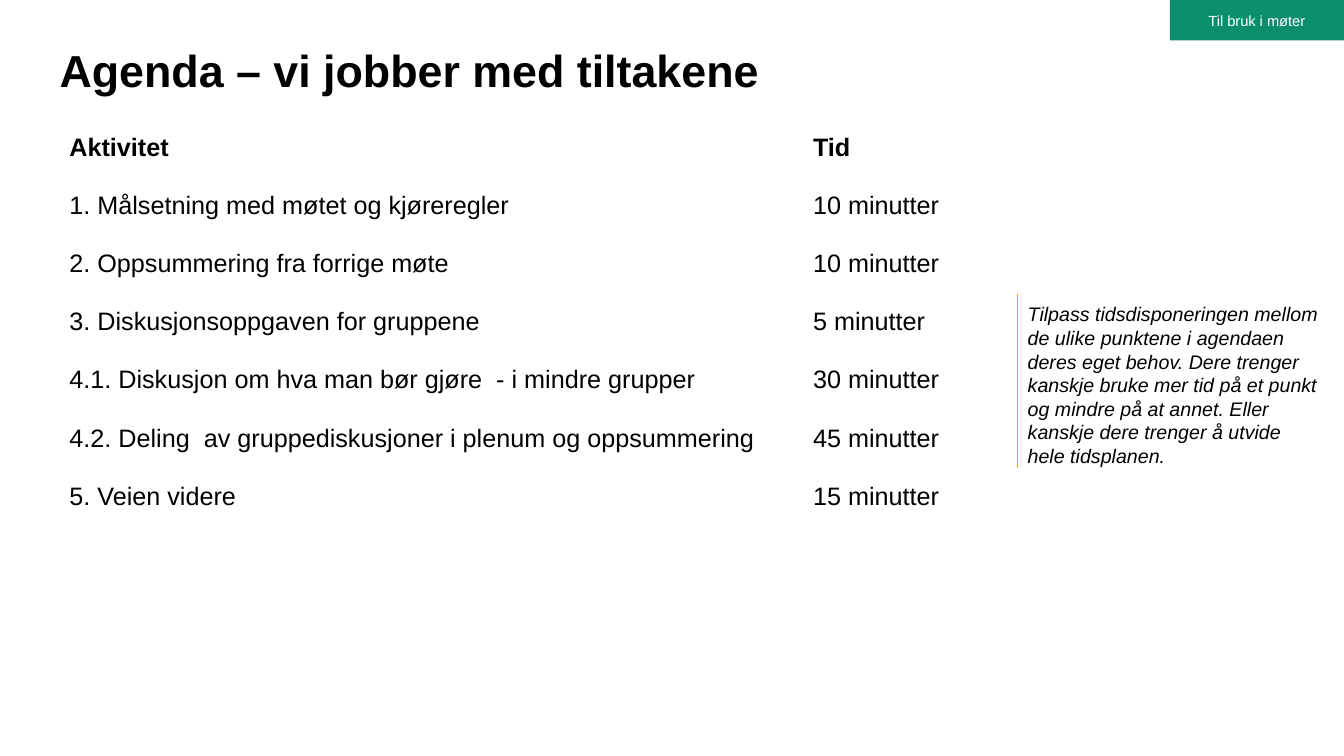
from dataclasses import dataclass

from lxml.etree import SubElement
from pptx import Presentation
from pptx.dml.color import RGBColor
from pptx.enum.shapes import MSO_CONNECTOR, MSO_SHAPE
from pptx.enum.text import MSO_ANCHOR, MSO_AUTO_SIZE, PP_ALIGN
from pptx.oxml.ns import qn
from pptx.shapes.shapetree import GroupShapes, SlideShapes
from pptx.slide import Slide
from pptx.text.text import TextFrame
from pptx.util import Cm, Pt

COLORS = {"text": "000000", "badge": "0A8E6E", "badge_text": "FFFFFF", "rule": "F0A519"}
FONT = "Arial"
LEFT = 1.5
AGENDA_TOP = 3.18
ROW_PITCH = 1.465
ROW_HEIGHT = 1.02
ACTIVITY_WIDTH = 23.01
TIME_LEFT = 20.24
TIME_WIDTH = 7.82
NOTE_LEFT = 25.65


@dataclass(frozen=True)
class AgendaRow:
    activity: str
    time: str
    bold: bool = False


AGENDA = [
    AgendaRow("Aktivitet", "Tid", bold=True),
    AgendaRow("1. Målsetning med møtet og kjøreregler", "10 minutter"),
    AgendaRow("2. Oppsummering fra forrige møte", "10 minutter"),
    AgendaRow("3. Diskusjonsoppgaven for gruppene", "5 minutter"),
    AgendaRow("4.1. Diskusjon om hva man bør gjøre  - i mindre grupper", "30 minutter"),
    AgendaRow("4.2. Deling  av gruppediskusjoner i plenum og oppsummering", "45 minutter"),
    AgendaRow("5. Veien videre", "15 minutter"),
]
NOTE = (
    "Tilpass tidsdisponeringen mellom de ulike punktene i agendaen deres eget behov. "
    "Dere trenger kanskje bruke mer tid på et punkt og mindre på at annet. "
    "Eller kanskje dere trenger å utvide hele tidsplanen."
)


def color(name: str) -> RGBColor:
    return RGBColor.from_string(COLORS[name])


def write(frame: TextFrame, text: str, size: float, ink: str = "text",
          bold: bool = False, italic: bool = False) -> None:
    frame.text = text
    frame.word_wrap = True
    font = frame.paragraphs[0].runs[0].font
    font.name, font.size, font.bold, font.italic = FONT, Pt(size), bold, italic
    font.color.rgb = color(ink)


def add_text(shapes: SlideShapes | GroupShapes, left: float, top: float, width: float,
             height: float, text: str, size: float, bold: bool = False,
             italic: bool = False) -> TextFrame:
    frame = shapes.add_textbox(Cm(left), Cm(top), Cm(width), Cm(height)).text_frame
    write(frame, text, size, bold=bold, italic=italic)
    frame.auto_size = MSO_AUTO_SIZE.SHAPE_TO_FIT_TEXT
    return frame


def add_title(slide: Slide) -> None:
    title = slide.shapes.title
    title.left, title.top, title.width, title.height = Cm(LEFT), Cm(1.22), Cm(31.78), Cm(1.96)
    frame = title.text_frame
    write(frame, "Agenda – vi jobber med tiltakene", 32, bold=True)
    frame.margin_left = frame.margin_right = frame.margin_top = frame.margin_bottom = 0
    frame.vertical_anchor = MSO_ANCHOR.TOP
    frame.auto_size = MSO_AUTO_SIZE.NONE
    frame.paragraphs[0].alignment = PP_ALIGN.LEFT
    frame.paragraphs[0].line_spacing = 0.9


def add_agenda(slide: Slide) -> None:
    for index, row in enumerate(AGENDA):
        top = AGENDA_TOP + index * ROW_PITCH
        add_text(slide.shapes, LEFT, top, ACTIVITY_WIDTH, ROW_HEIGHT, row.activity, 18, row.bold)
        add_text(slide.shapes, TIME_LEFT, top, TIME_WIDTH, ROW_HEIGHT, row.time, 18, row.bold)


def add_badge(slide: Slide) -> None:
    badge = slide.shapes.add_shape(MSO_SHAPE.RECTANGLE, Cm(29.48), 0, Cm(4.39), Cm(1.02))
    badge.shadow.inherit = False
    badge.fill.solid()
    badge.fill.fore_color.rgb = color("badge")
    badge.line.fill.background()
    write(badge.text_frame, "Til bruk i møter", 10.5, "badge_text")
    badge.text_frame.vertical_anchor = MSO_ANCHOR.MIDDLE
    badge.text_frame.paragraphs[0].alignment = PP_ALIGN.CENTER


def add_note(slide: Slide) -> None:
    shapes = slide.shapes.add_group_shape().shapes
    frame = add_text(shapes, NOTE_LEFT, 7.47, TIME_WIDTH, 4.45, NOTE, 14, italic=True)
    frame.vertical_anchor = MSO_ANCHOR.MIDDLE
    rule = shapes.add_connector(
        MSO_CONNECTOR.STRAIGHT, Cm(NOTE_LEFT), Cm(7.42), Cm(NOTE_LEFT), Cm(11.79))
    rule.line.color.rgb = color("rule")
    rule.line.width = Pt(0.5)
    SubElement(rule.element.spPr, qn("a:effectLst"))


def main() -> None:
    deck = Presentation()
    deck.slide_width, deck.slide_height = Cm(33.87), Cm(19.05)
    slide = deck.slides.add_slide(deck.slide_layouts[5])
    add_title(slide)
    add_agenda(slide)
    add_badge(slide)
    add_note(slide)
    deck.save("out.pptx")


if __name__ == "__main__":
    main()
